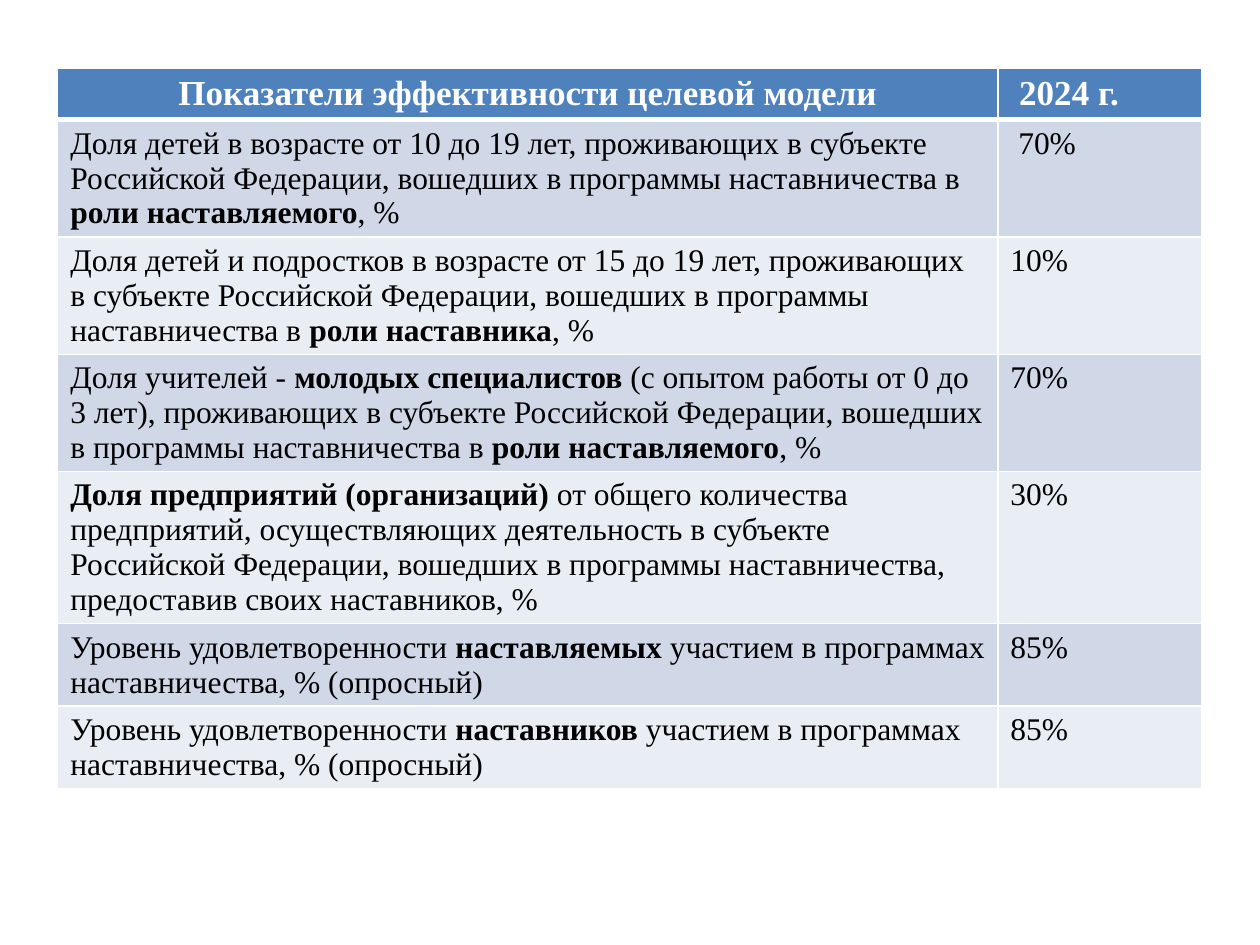
from lxml import etree
from pptx import Presentation
from pptx.dml.color import RGBColor
from pptx.enum.text import PP_ALIGN
from pptx.oxml.ns import qn
from pptx.util import Pt

CENTER, LEFT = PP_ALIGN.CENTER, PP_ALIGN.LEFT
FONT = "Times New Roman"
COLORS = {"head": "4F81BD", "odd": "D0D8E8", "even": "E9EDF4",
          "white": "FFFFFF", "black": "000000"}

# Asterisks enclose the bold words
ROWS = [
    ("*Показатели эффективности целевой модели*", "* 2024 г.*"),
    ("Доля детей в возрасте от 10 до 19 лет, проживающих в субъекте "
     "Российской Федерации, вошедших в программы наставничества в "
     "*роли наставляемого*, %", " 70%"),
    ("Доля детей и подростков в возрасте от 15 до 19 лет, проживающих в "
     "субъекте Российской Федерации, вошедших в программы наставничества в "
     "*роли наставника*, %", "10%"),
    ("Доля учителей - *молодых специалистов *(с опытом работы от 0 до 3 лет), "
     "проживающих в субъекте Российской Федерации, вошедших в программы "
     "наставничества в *роли наставляемого*, %", "70%"),
    ("*Доля предприятий (организаций) *от общего количества предприятий, "
     "осуществляющих деятельность в субъекте Российской Федерации, вошедших "
     "в программы наставничества, предоставив своих наставников, %", "30%"),
    ("Уровень удовлетворенности *наставляемых* участием в программах "
     "наставничества, % (опросный)", "85%"),
    ("Уровень удовлетворенности *наставников* участием в программах "
     "наставничества, % (опросный)", "85%"),
]


def add_text(cell, text, size, color, align):
    para = cell.text_frame.paragraphs[0]
    para.alignment = align
    for i, part in enumerate(text.split("*")):
        if not part:
            continue
        run = para.add_run()
        run.text = part
        font = run.font
        font.name, font.size, font.bold = FONT, Pt(size), i % 2 == 1
        font.color.rgb = RGBColor.from_string(COLORS[color])


def add_edges(cell, widths):
    props = cell._tc.get_or_add_tcPr()
    for side, width in widths.items():
        line = etree.SubElement(props, qn("a:ln" + side), w=str(Pt(width)))
        fill = etree.SubElement(line, qn("a:solidFill"))
        etree.SubElement(fill, qn("a:srgbClr"), val=COLORS["white"])


def set_cell(cell, text, row, col):
    head = row == 0
    # The rule below the heading is thicker
    add_edges(cell, {"L": 1, "R": 1, "T": 3 if row == 1 else 1,
                     "B": 3 if head else 1})
    shade = "head" if head else "odd" if row % 2 else "even"
    cell.fill.solid()
    cell.fill.fore_color.rgb = RGBColor.from_string(COLORS[shade])
    add_text(cell, text, 20 if head else 18, "white" if head else "black",
             CENTER if head and col == 0 else LEFT)


def add_grid(slide):
    frame = slide.shapes.add_table(len(ROWS), 2, Pt(33), Pt(39),
                                   Pt(653.8), Pt(441.4))
    table = frame.table
    for col, width in zip(table.columns, (537.2, 116.6)):
        col.width = Pt(width)
    # Rows grow to fit their text
    for row in table.rows:
        row.height = Pt(29.2)
    frame.height = Pt(441.4)
    for r, texts in enumerate(ROWS):
        for c, text in enumerate(texts):
            set_cell(table.cell(r, c), text, r, c)


def main():
    prs = Presentation()
    prs.slide_width, prs.slide_height = Pt(720), Pt(540)
    slide = prs.slides.add_slide(prs.slide_layouts[6])
    add_grid(slide)
    prs.save("out.pptx")


if __name__ == "__main__":
    main()
